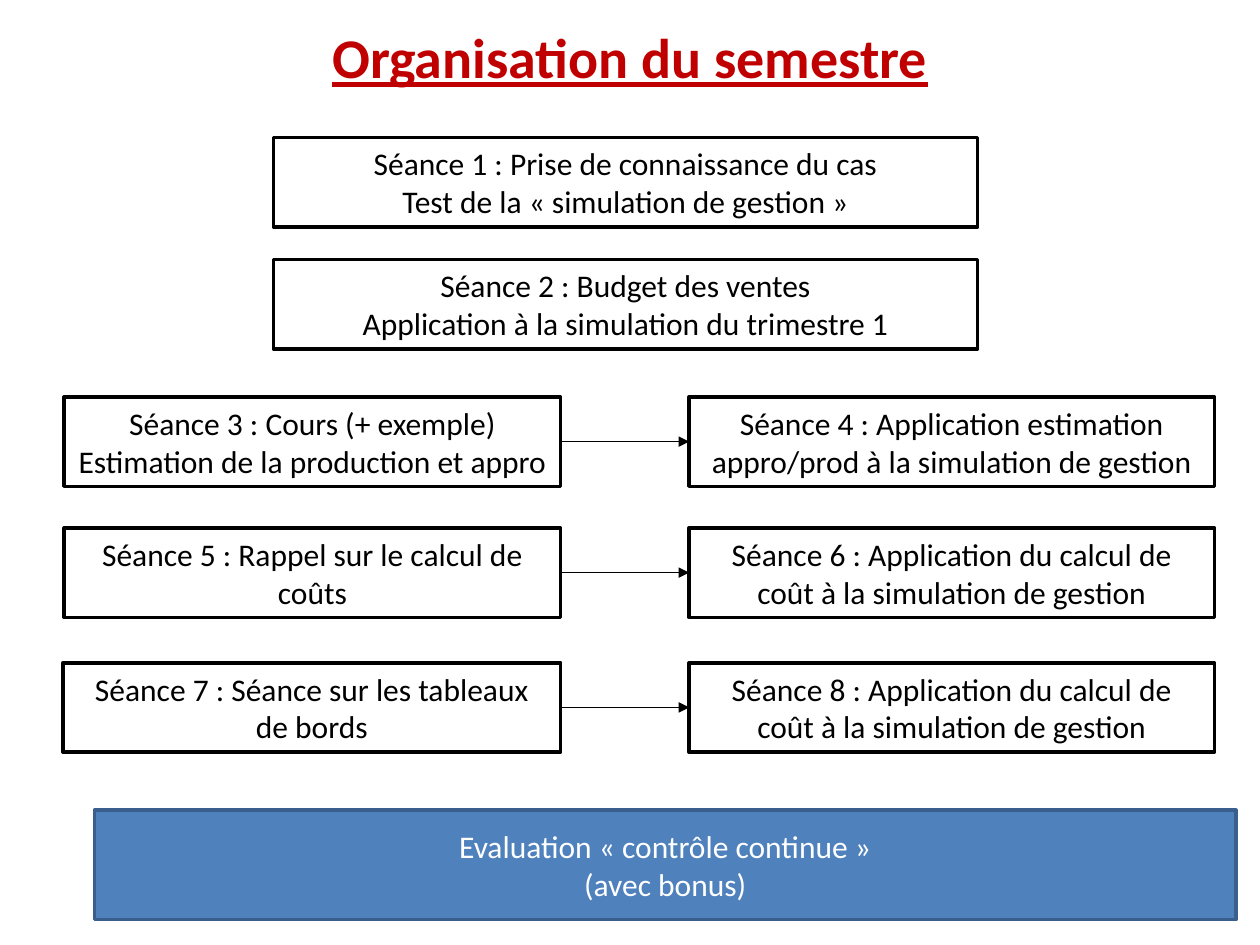
from lxml import etree
from pptx import Presentation
from pptx.dml.color import RGBColor
from pptx.enum.shapes import MSO_CONNECTOR, MSO_SHAPE
from pptx.enum.text import MSO_ANCHOR, PP_ALIGN
from pptx.oxml.ns import qn
from pptx.util import Pt

RECTANGLE = MSO_SHAPE.RECTANGLE
STRAIGHT = MSO_CONNECTOR.STRAIGHT
TOP, MIDDLE = MSO_ANCHOR.TOP, MSO_ANCHOR.MIDDLE
CENTER = PP_ALIGN.CENTER
LEFT_SIDE, RIGHT_SIDE = 1, 3

COLOURS = {
    "white": "FFFFFF",
    "black": "000000",
    "title": "C00000",
    "blue": "4F81BD",
    "blue_edge": "3A5F8C",
}


def colour(name):
    return RGBColor.from_string(COLOURS[name])


class SemesterPage:
    font = "Calibri"
    text_size = 18
    title_size = 32
    border = 2
    arrow_width = 0.75

    def __init__(self, page):
        self.page = page

    def box(self, left, top, width, height, text, fill="white", edge="black", ink="black"):
        box = self.page.shapes.add_shape(
            RECTANGLE, Pt(left), Pt(top), Pt(width), Pt(height))
        box.shadow.inherit = False
        box.fill.solid()
        box.fill.fore_color.rgb = colour(fill)
        if edge:
            box.line.color.rgb = colour(edge)
            box.line.width = Pt(self.border)
        else:
            box.line.fill.background()
        frame = box.text_frame
        frame.word_wrap = True
        frame.vertical_anchor = MIDDLE
        frame.text = text
        for para in frame.paragraphs:
            para.alignment = CENTER
            for span in para.runs:
                span.font.name = self.font
                span.font.size = Pt(self.text_size)
                span.font.color.rgb = colour(ink)
        return box

    def title(self, left, top, width, height, text):
        box = self.box(left, top, width, height, text, edge=None, ink="title")
        box.text_frame.vertical_anchor = TOP
        span = box.text_frame.paragraphs[0].runs[0]
        span.font.size = Pt(self.title_size)
        span.font.bold = True
        span.font.underline = True

    def arrow(self, source, target):
        arrow = self.page.shapes.add_connector(STRAIGHT, 0, 0, 0, 0)
        arrow.begin_connect(source, RIGHT_SIDE)
        arrow.end_connect(target, LEFT_SIDE)
        arrow.line.color.rgb = colour("black")
        arrow.line.width = Pt(self.arrow_width)
        etree.SubElement(arrow.line._get_or_add_ln(), qn("a:tailEnd"), type="triangle")
        etree.SubElement(arrow._element.spPr, qn("a:effectLst"))


def main():
    deck = Presentation()
    deck.slide_width, deck.slide_height = Pt(720), Pt(540)
    semester = SemesterPage(deck.slides.add_slide(deck.slide_layouts[6]))
    box_height = 51.1

    # Title
    semester.title(36, 9.4, 648, 90, "Organisation du semestre")

    # Opening sessions, one box each
    openings = [
        (78.5, "Séance 1 : Prise de connaissance du cas\nTest de la « simulation de gestion »"),
        (148.3, "Séance 2 : Budget des ventes\nApplication à la simulation du trimestre 1"),
    ]
    for top, text in openings:
        semester.box(156.2, top, 402.5, box_height, text)

    # Course sessions, each leading to its application
    course_right, application_left = 320.4, 393.8
    pairs = [
        (36.7, 226.8, "Séance 3 : Cours (+ exemple) Estimation de la production et appro",
         "Séance 4 : Application estimation appro/prod à la simulation de gestion"),
        (36.7, 301.7, "Séance 5 : Rappel sur le calcul de coûts",
         "Séance 6 : Application du calcul de coût à la simulation de gestion"),
        (36, 378.7, "Séance 7 : Séance sur les tableaux de bords",
         "Séance 8 : Application du calcul de coût à la simulation de gestion"),
    ]
    for left, top, course_text, application_text in pairs:
        course = semester.box(left, top, course_right - left, box_height, course_text)
        application = semester.box(application_left, top, 300.2, box_height, application_text)
        semester.arrow(course, application)

    # Evaluation banner
    semester.box(54, 463, 652.3, 62.6, "Evaluation « contrôle continue »\n(avec bonus)",
                 fill="blue", edge="blue_edge", ink="white")

    deck.save("out.pptx")


if __name__ == "__main__":
    main()
